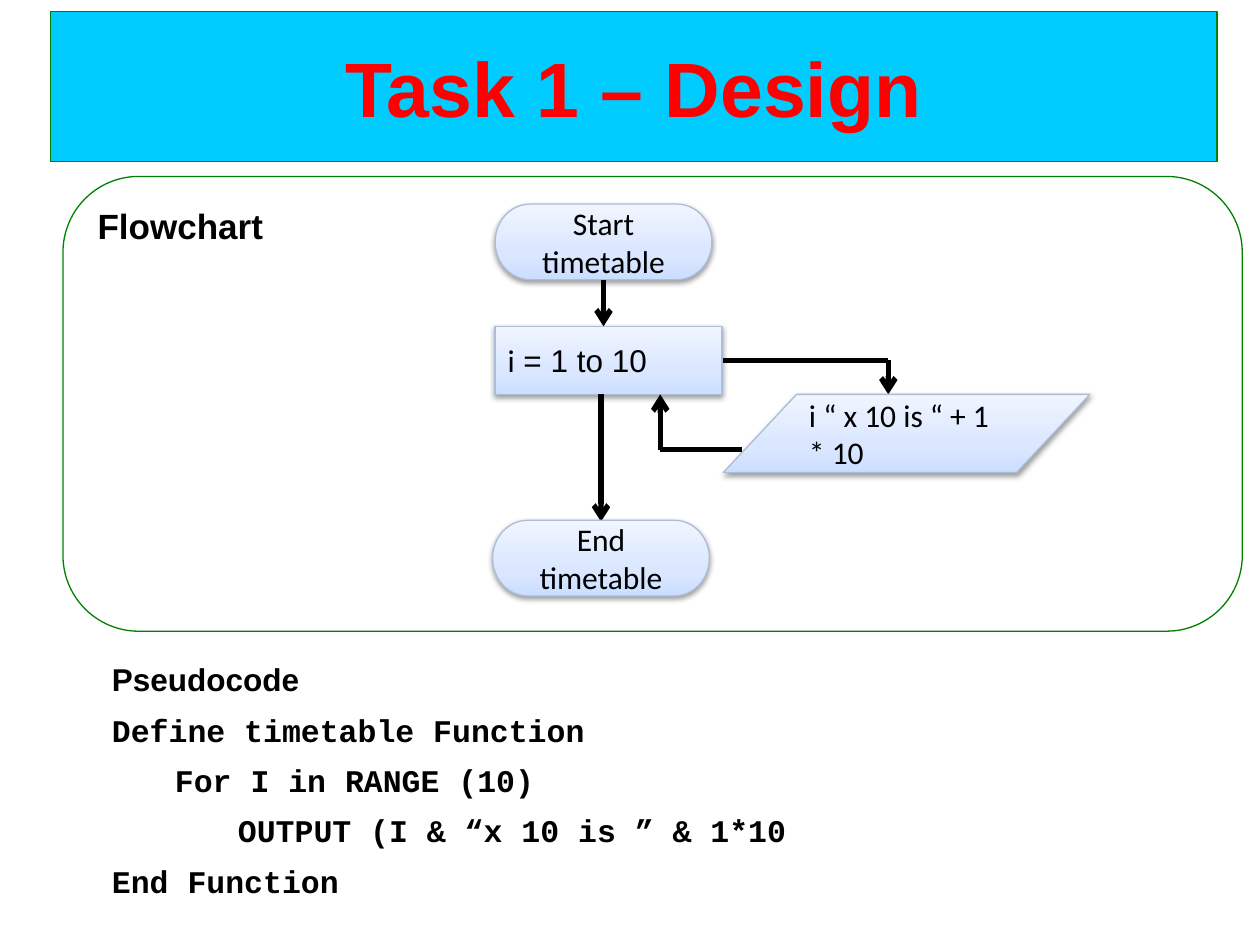
from dataclasses import dataclass

from lxml import etree
from pptx import Presentation
from pptx.dml.color import RGBColor
from pptx.enum.shapes import MSO_CONNECTOR as CONN, MSO_SHAPE as SHAPE
from pptx.enum.text import MSO_ANCHOR as ANCHOR, PP_ALIGN as ALIGN
from pptx.oxml import parse_xml
from pptx.oxml.ns import nsdecls, qn
from pptx.util import Inches, Pt


@dataclass(frozen=True)
class Theme:
    black: str = "000000"
    banner: str = "00CCFF"
    title: str = "FF0000"
    frame: str = "008000"
    node_line: str = "ADBCD7"
    gradient: tuple = ((0, "CCDEFF"), (35, "DAE7FF"), (100, "F0F5FF"))
    sans: str = "Arial"
    node_font: str = "Calibri"
    mono: str = "Courier New"
    title_size: int = 44
    heading_size: int = 20
    body_size: int = 18
    thin: float = 0.75
    thick: float = 3
    para_gap: float = 7.2
    indent: float = 0.5


class SlideBuilder:
    def __init__(self, prs, theme):
        self.theme = theme
        self.slide = prs.slides.add_slide(prs.slide_layouts[6])

    def style(self, p, size, font, color=None, bold=False):
        p.font.size, p.font.name, p.font.bold = Pt(size), font, bold
        p.font.color.rgb = RGBColor.from_string(color or self.theme.black)

    def shape(self, kind, box, line, fill=None):
        s = self.slide.shapes.add_shape(kind, *map(Inches, box))
        s.shadow.inherit = False
        s.line.color.rgb = RGBColor.from_string(line)
        s.line.width = Pt(self.theme.thin)
        if fill:
            s.fill.solid()
            s.fill.fore_color.rgb = RGBColor.from_string(fill)
        else:
            s.fill.background()
        s.text_frame.word_wrap = True
        return s

    def banner(self, text, box):
        t = self.theme
        s = self.shape(SHAPE.RECTANGLE, box, t.frame, t.banner)
        s.text_frame.vertical_anchor = ANCHOR.MIDDLE
        p = s.text_frame.paragraphs[0]
        p.text, p.alignment = text, ALIGN.CENTER
        self.style(p, t.title_size, t.sans, t.title, True)

    def panel(self, heading, box):
        t = self.theme
        s = self.shape(SHAPE.ROUNDED_RECTANGLE, box, t.frame)
        s.text_frame.vertical_anchor = ANCHOR.TOP
        p = s.text_frame.paragraphs[0]
        p.text, p.alignment = heading, ALIGN.LEFT
        self.style(p, t.heading_size, t.sans, bold=True)

    def node(self, kind, box, runs, align=ALIGN.LEFT):
        """Flowchart symbol; runs are (text, font) pairs."""
        t = self.theme
        s = self.shape(kind, box, t.node_line)
        # Three-stop gradient and soft shadow
        stops = "".join(
            f'<a:gs pos="{pos * 1000}"><a:srgbClr val="{color}"/></a:gs>'
            for pos, color in t.gradient)
        sp_pr = s._element.spPr
        sp_pr.replace(sp_pr.find(qn("a:noFill")), parse_xml(
            f'<a:gradFill {nsdecls("a")} rotWithShape="1"><a:gsLst>{stops}'
            '</a:gsLst><a:lin ang="16200000" scaled="0"/></a:gradFill>'))
        sp_pr.find(qn("a:effectLst")).append(parse_xml(
            f'<a:outerShdw {nsdecls("a")} blurRad="40000" dist="20000" '
            f'dir="5400000" rotWithShape="0"><a:srgbClr val="{t.black}">'
            '<a:alpha val="38000"/></a:srgbClr></a:outerShdw>'))
        tf = s.text_frame
        tf.vertical_anchor = ANCHOR.MIDDLE
        p = tf.paragraphs[0]
        p.alignment = align
        self.style(p, t.body_size, runs[0][1])
        for text, font in runs:
            r = p.add_run()
            r.text = text
            if font != runs[0][1]:
                r.font.name = font

    def line(self, start, end, arrow=True):
        c = self.slide.shapes.add_connector(
            CONN.STRAIGHT, *map(Inches, (*start, *end)))
        c.line.color.rgb = RGBColor.from_string(self.theme.black)
        c.line.width = Pt(self.theme.thick)
        if arrow:
            etree.SubElement(c.line._get_or_add_ln(), qn("a:tailEnd"), type="arrow")
        etree.SubElement(c._element.spPr, qn("a:effectLst"))

    def code(self, heading, lines, box):
        """Heading followed by (indent level, text) lines."""
        t = self.theme
        tf = self.slide.shapes.add_textbox(*map(Inches, box)).text_frame
        tf.word_wrap = True
        p = tf.paragraphs[0]
        p.text = heading
        self.style(p, t.body_size, t.sans, bold=True)
        for level, text in lines:
            p = tf.add_paragraph()
            p.text, p.space_before = text, Pt(t.para_gap)
            if level:
                p._p.get_or_add_pPr().set("marL", str(Inches(level * t.indent)))
            self.style(p, t.body_size, t.mono, bold=True)


def main():
    prs = Presentation()
    prs.slide_width, prs.slide_height = Inches(10), Inches(7.5)
    theme = Theme()
    b = SlideBuilder(prs, theme)
    font = theme.node_font

    # Title and flowchart panel
    b.banner("Task 1 – Design", (0.4, 0.09, 9.26, 1.19))
    b.panel("Flowchart", (0.5, 1.4, 9.36, 3.61))

    # Start and loop counter
    b.node(SHAPE.FLOWCHART_TERMINATOR, (3.93, 1.62, 1.72, 0.6),
           [("Start timetable", font)], ALIGN.CENTER)
    b.line((4.79, 2.22), (4.79, 2.59))
    b.node(SHAPE.RECTANGLE, (3.93, 2.59, 1.8, 0.54),
           [("i", font), (" = 1 to 10", theme.sans)])

    # Loop body: out to the output symbol and back
    b.line((7.05, 2.86), (7.05, 3.13))
    b.node(SHAPE.FLOWCHART_DATA, (5.74, 3.13, 2.91, 0.62),
           [("i “ x 10 is “ + 1 * 10", font)])
    b.line((5.74, 2.86), (7.05, 2.86), arrow=False)
    b.line((5.24, 3.57), (5.89, 3.57), arrow=False)
    b.line((5.24, 3.57), (5.24, 3.13))

    # End
    b.line((4.77, 3.13), (4.77, 4.14))
    b.node(SHAPE.FLOWCHART_TERMINATOR, (3.91, 4.13, 1.72, 0.6),
           [("End timetable", font)], ALIGN.CENTER)

    # Pseudocode
    b.code("Pseudocode", [
        (0, "Define timetable Function"),
        (1, "For I in RANGE (10)"),
        (2, "OUTPUT (I & “x 10 is ” & 1*10"),
        (0, "End Function"),
    ], (0.79, 5.19, 7.2, 1.95))

    prs.save("out.pptx")


if __name__ == "__main__":
    main()
